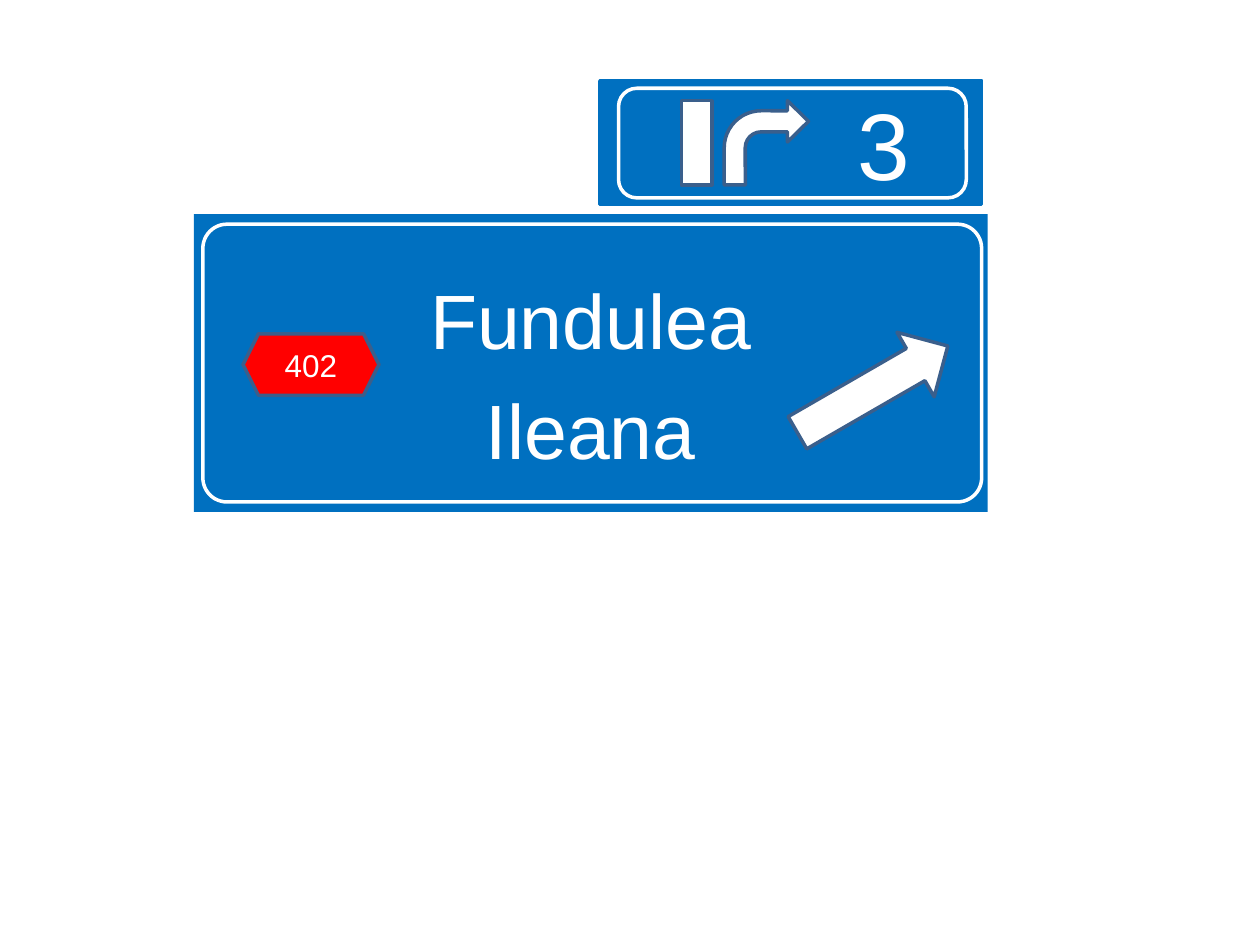
from pptx import Presentation
from pptx import util as u
from pptx.dml.color import RGBColor
from pptx.enum import shapes, text

COLORS = {"blue": "0070C0", "white": "FFFFFF", "red": "FF0000", "outline": "3A5F8C"}
FONT = "Arial"
KINDS = shapes.MSO_SHAPE


def add_part(slide, kind, box, fill=None, line=None, adjustments=()):
    """Add a preset shape; box is left, top, width, height in cm."""
    shape = slide.shapes.add_shape(kind, *[u.Cm(length) for length in box])
    shape.shadow.inherit = False
    for index, value in enumerate(adjustments):
        shape.adjustments[index] = value
    if fill:
        shape.fill.solid()
        shape.fill.fore_color.rgb = RGBColor.from_string(COLORS[fill])
    else:
        shape.fill.background()
    if line:
        shape.line.color.rgb = RGBColor.from_string(COLORS[line])
        shape.line.width = u.Pt(2)
    else:
        shape.line.fill.background()
    return shape


def write_text(shape, words, size, anchor=text.MSO_ANCHOR.MIDDLE, gap=0):
    """Write centred white text, with a gap in points between paragraphs."""
    frame = shape.text_frame
    frame.word_wrap = True
    frame.vertical_anchor = anchor
    frame.text = words
    for index, paragraph in enumerate(frame.paragraphs):
        paragraph.alignment = text.PP_ALIGN.CENTER
        paragraph.space_before = u.Pt(gap if index else 0)
        for run in paragraph.runs:
            run.font.name = FONT
            run.font.size = u.Pt(size)
            run.font.color.rgb = RGBColor.from_string(COLORS["white"])


def add_direction_sign(slide, left, top, width, height):
    # Panel with the place names
    panel = add_part(slide, KINDS.RECTANGLE, (left, top, width, height), "blue")
    panel.text_frame.margin_top = u.Cm(1.17)
    write_text(panel, "Fundulea\nIleana", 44, text.MSO_ANCHOR.TOP, gap=10)

    # Road number
    badge = add_part(slide, KINDS.HEXAGON, (left + 0.99, top + 2.41, 2.74, 1.24),
                     "red", "outline")
    write_text(badge, "402", 18)

    # Slanted arrow
    arrow = add_part(slide, KINDS.UP_ARROW, (left + 12.93, top + 1.78, 1.5, 3.5),
                     "white", "outline")
    arrow.rotation = 60

    # Inner border
    add_part(slide, KINDS.ROUNDED_RECTANGLE,
             (left + 0.18, top + 0.2, width - 0.3, height - 0.4),
             line="white", adjustments=[0.087])


def add_exit_sign(slide, left, top, width, height):
    # Panel with the exit number
    panel = add_part(slide, KINDS.ROUNDED_RECTANGLE, (left, top, width, height),
                     "blue", "blue", [0])
    panel.text_frame.margin_left = u.Cm(3.99)
    write_text(panel, "3", 54)

    # Inner border
    add_part(slide, KINDS.ROUNDED_RECTANGLE,
             (left + 0.38, top + 0.15, width - 0.69, height - 0.28), line="white")

    # Main road and the turn to the right
    add_part(slide, KINDS.RECTANGLE, (left + 1.65, top + 0.4, 0.61, 1.7),
             "white", "outline")
    add_part(slide, KINDS.BENT_ARROW, (left + 2.51, top + 0.4, 1.7, 1.7),
             "white", "outline", [0.25, 0.245, 0.25, 0.438])


def main():
    presentation = Presentation()
    presentation.slide_width = u.Cm(25.4)
    presentation.slide_height = u.Cm(19.05)
    slide = presentation.slides.add_slide(presentation.slide_layouts[6])
    add_direction_sign(slide, 3.91, 4.32, 16, 6)
    add_exit_sign(slide, 12.09, 1.63, 7.7, 2.49)
    presentation.save("out.pptx")


if __name__ == "__main__":
    main()
